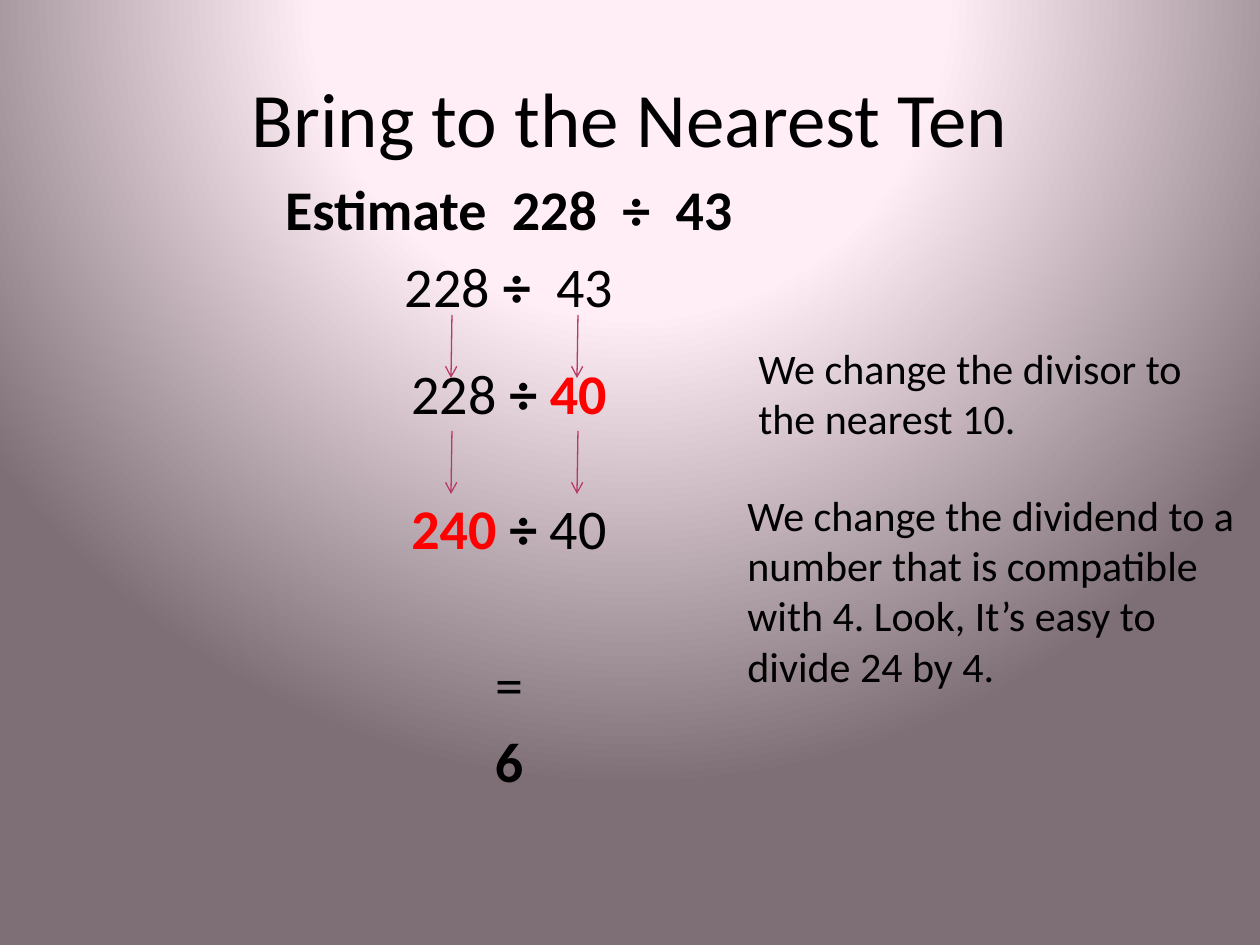
from itertools import product
from typing import NamedTuple

from lxml.etree import SubElement
from pptx import Presentation
from pptx.dml.color import RGBColor
from pptx.enum.shapes import MSO_CONNECTOR as Connector
from pptx.enum.text import MSO_ANCHOR as Anchor, MSO_AUTO_SIZE as AutoSize, PP_ALIGN as Align
from pptx.oxml.ns import qn
from pptx.util import Emu, Pt

EMU_PER_PX = 914400 / 126
FONT = "Calibri"
BLACK = RGBColor(0x00, 0x00, 0x00)
RED = RGBColor(0xFF, 0x00, 0x00)
ROSE = RGBColor(0xB7, 0x39, 0x65)
GLOW_STOPS = (
    (0, RGBColor(0xFF, 0xF1, 0xF8)),
    (40, RGBColor(0xFF, 0xEE, 0xF6)),
    (100, RGBColor(0x7E, 0x6E, 0x75)),
)
GLOW_CENTRE = {"l": 50, "t": -80, "r": 50, "b": 180}


class Box(NamedTuple):
    left: int
    top: int
    width: int
    height: int


class Term(NamedTuple):
    text: str
    bold: bool = False
    color: RGBColor = BLACK


class Step(NamedTuple):
    space_before: float
    terms: tuple[Term, ...]


class Note(NamedTuple):
    box: Box
    text: str


TITLE_BOX = Box(63, 38, 1134, 158)
STEPS_BOX = Box(63, 168, 892, 677)
STEPS = (
    Step(0, (Term("Estimate  228  ÷  43", True),)),
    Step(5.5, (Term("228 "), Term("÷  ", True), Term("43"))),
    Step(23.2, (Term("228 "), Term("÷ ", True), Term("40", True, RED))),
    Step(38.6, (Term("240 ", True, RED), Term("÷ ", True), Term("40"))),
    Step(50.6, (Term("="),)),
    Step(5.5, (Term("6", True),)),
)
NOTES = (
    Note(Box(735, 483, 525, 217),
         "We change the dividend to a number that is compatible with 4. "
         "Look, It’s easy to divide 24 by 4."),
    Note(Box(746, 336, 462, 115), "We change the divisor to the nearest 10."),
)
ARROW_TOPS = (315, 431)
ARROW_LEFTS = (452, 578)
ARROW_LENGTH = 63


def px(length: int) -> Emu:
    return Emu(round(length * EMU_PER_PX))


def place(shape, box: Box) -> None:
    shape.left, shape.top, shape.width, shape.height = map(px, box)


def set_font(font, size: int) -> None:
    font.name, font.size = FONT, Pt(size)
    font.color.rgb = BLACK


def paint_background(slide) -> None:
    """Fill the slide with a circular glow centred above its top edge."""
    slide.background.fill.gradient()
    gradient = slide.element.find(".//" + qn("a:gradFill"))
    for child in list(gradient):
        gradient.remove(child)
    stops = SubElement(gradient, qn("a:gsLst"))
    for percent, color in GLOW_STOPS:
        stop = SubElement(stops, qn("a:gs"), pos=str(percent * 1000))
        SubElement(stop, qn("a:srgbClr"), val=str(color))
    circle = SubElement(gradient, qn("a:path"), {"path": "circle"})
    SubElement(circle, qn("a:fillToRect"),
               {side: str(percent * 1000) for side, percent in GLOW_CENTRE.items()})


def write_title(title) -> None:
    place(title, TITLE_BOX)
    title.text_frame.text = "Bring to the Nearest Ten"
    title.text_frame.vertical_anchor = Anchor.MIDDLE
    heading = title.text_frame.paragraphs[0]
    heading.alignment = Align.CENTER
    set_font(heading.font, 44)


def write_steps(body) -> None:
    place(body, STEPS_BOX)
    frame = body.text_frame
    frame.auto_size = AutoSize.NONE
    for index, step in enumerate(STEPS):
        line = frame.add_paragraph() if index else frame.paragraphs[0]
        line.alignment = Align.CENTER
        line.space_before = Pt(step.space_before)
        SubElement(line._p.get_or_add_pPr(), qn("a:buNone"))
        set_font(line.font, 32)
        for term in step.terms:
            run = line.add_run()
            run.text = term.text
            run.font.bold = term.bold
            run.font.color.rgb = term.color


def draw_arrow(slide, left: int, top: int) -> None:
    arrow = slide.shapes.add_connector(
        Connector.STRAIGHT, px(left), px(top), px(left - 1), px(top + ARROW_LENGTH))
    arrow.line.color.rgb = ROSE
    arrow.line.width = Pt(0.75)
    SubElement(arrow.line._get_or_add_ln(), qn("a:tailEnd"), type="arrow")
    SubElement(arrow._element.spPr, qn("a:effectLst"))


def add_note(slide, note: Note) -> None:
    frame = slide.shapes.add_textbox(*map(px, note.box)).text_frame
    frame.word_wrap = True
    frame.auto_size = AutoSize.SHAPE_TO_FIT_TEXT
    frame.text = note.text
    set_font(frame.paragraphs[0].font, 24)


def main() -> None:
    deck = Presentation()
    deck.slide_width, deck.slide_height = px(1260), px(945)
    slide = deck.slides.add_slide(deck.slide_layouts[1])
    paint_background(slide)
    write_title(slide.shapes.title)
    write_steps(slide.placeholders[1])
    for top, left in product(ARROW_TOPS, ARROW_LEFTS):
        draw_arrow(slide, left, top)
    for note in NOTES:
        add_note(slide, note)
    deck.save("out.pptx")


if __name__ == "__main__":
    main()
